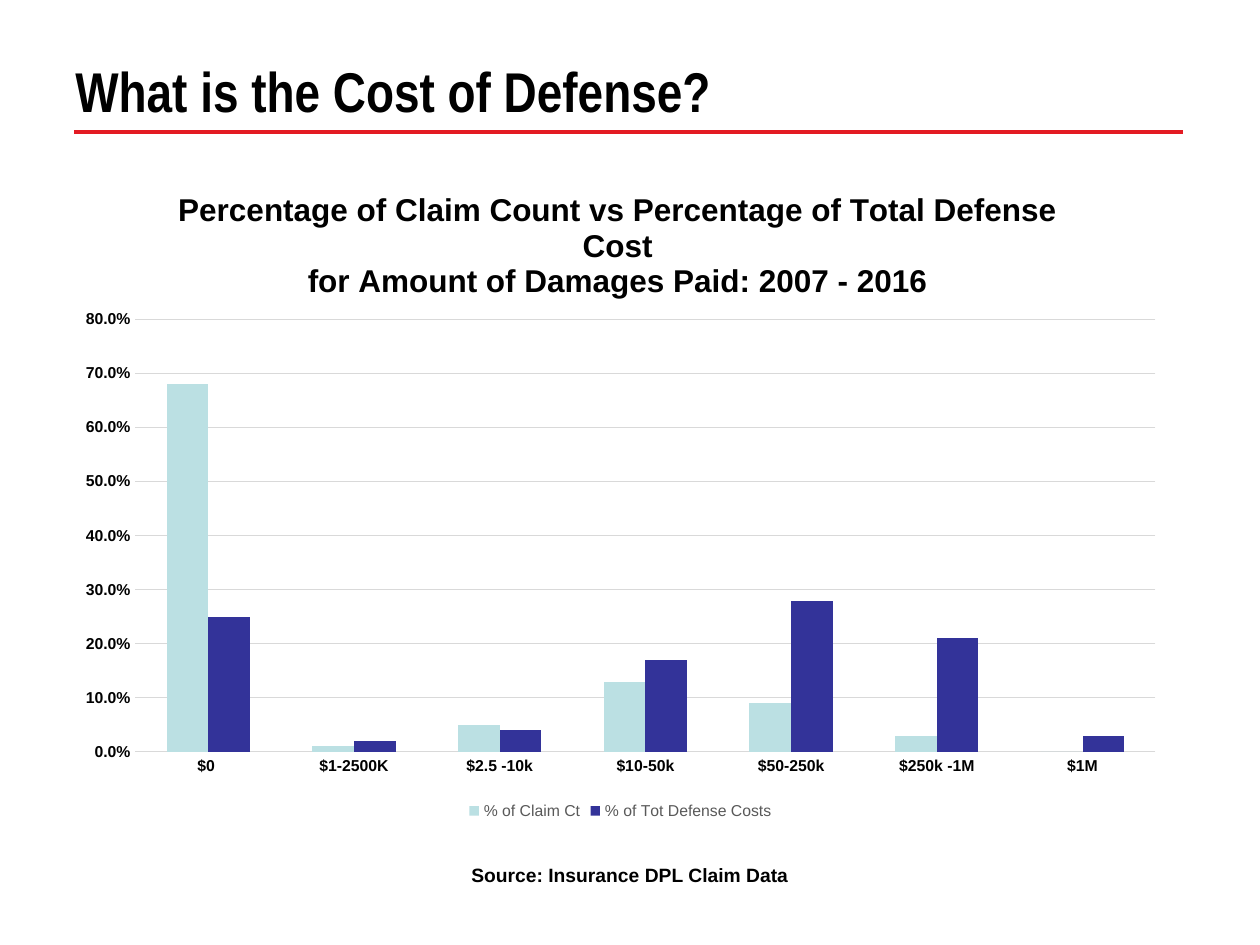
from dataclasses import dataclass

from lxml import etree
from pptx import Presentation
from pptx import util as u
from pptx.chart.data import CategoryChartData
from pptx.dml.color import RGBColor
from pptx.enum import chart as charts, shapes, text
from pptx.oxml.ns import qn


@dataclass(frozen=True)
class Theme:
    ink: str = "000000"
    accent: str = "E31B23"
    grid: str = "D9D9D9"
    legend: str = "595959"
    claims: str = "BBE0E3"
    costs: str = "333399"
    heading_font: str = "Arial Narrow"
    body_font: str = "Arial"
    heading_size: float = 32
    chart_title_size: float = 18
    source_size: float = 11
    label_size: float = 9


class SlideBuilder:
    def __init__(self, page, theme):
        self.page = page
        self.theme = theme

    def style(self, font, size, color=None, name=None, bold=True):
        font.name = name or self.theme.body_font
        font.size = u.Pt(size)
        font.bold = bold
        font.color.rgb = RGBColor.from_string(color or self.theme.ink)

    def label(self, words, left, top, width, height, size, name=None,
              align=text.PP_ALIGN.LEFT, anchor=text.MSO_ANCHOR.TOP):
        box = self.page.shapes.add_textbox(*map(u.Pt, (left, top, width, height)))
        frame = box.text_frame
        frame.word_wrap = True
        frame.vertical_anchor = anchor
        frame.text = words
        para = frame.paragraphs[0]
        para.alignment = align
        for span in para.runs:
            self.style(span.font, size, name=name)

    def rule(self, left, right, y):
        line = self.page.shapes.add_connector(
            shapes.MSO_CONNECTOR.STRAIGHT, *map(u.Pt, (left, y, right, y)))
        line.line.color.rgb = RGBColor.from_string(self.theme.accent)
        line.line.width = u.Pt(2)
        etree.SubElement(line._element.spPr, qn("a:effectLst"))

    def place(self, parent, index, **fractions):
        """Give a chart part a manual layout in fractions of the chart."""
        for old in parent.findall(qn("c:layout")):
            parent.remove(old)
        layout = etree.Element(qn("c:layout"))
        manual = etree.SubElement(layout, qn("c:manualLayout"))
        if "w" in fractions:
            etree.SubElement(manual, qn("c:layoutTarget")).set("val", "inner")
        for key in ("x", "y"):
            etree.SubElement(manual, qn(f"c:{key}Mode")).set("val", "edge")
        for key, value in fractions.items():
            etree.SubElement(manual, qn(f"c:{key}")).set("val", str(value))
        parent.insert(index, layout)

    def column_chart(self, title, categories, series, left, top, width, height):
        theme = self.theme
        data = CategoryChartData(number_format="0.0%")
        data.categories = categories
        for name, values, _ in series:
            data.add_series(name, values)
        chart = self.page.shapes.add_chart(
            charts.XL_CHART_TYPE.COLUMN_CLUSTERED,
            *map(u.Pt, (left, top, width, height)), data).chart
        self.style(chart.font, 10, bold=False)

        # Title
        frame = chart.chart_title.text_frame
        frame.text = title
        for para in frame.paragraphs:
            para.alignment = text.PP_ALIGN.CENTER
            for span in para.runs:
                self.style(span.font, theme.chart_title_size)
        chart.chart_title.include_in_layout = False
        self.place(chart.chart_title._element, 1, x=0.1, y=0.04)

        # Columns
        plot = chart.plots[0]
        plot.gap_width = 150
        plot.overlap = 0
        plot.vary_by_categories = False
        for columns, (_, _, color) in zip(plot.series, series):
            columns.format.fill.solid()
            columns.format.fill.fore_color.rgb = RGBColor.from_string(color)
            columns.invert_if_negative = False
        self.place(plot._element.getparent(), 0, x=0.065, y=0.24, w=0.915, h=0.65)

        # Axes and grid
        for axis in (chart.category_axis, chart.value_axis):
            axis.major_tick_mark = axis.minor_tick_mark = charts.XL_TICK_MARK.NONE
            axis.format.line.fill.background()
            self.style(axis.tick_labels.font, theme.label_size)
        scale = chart.value_axis
        scale.minimum_scale, scale.maximum_scale, scale.major_unit = 0, 0.8, 0.1
        scale.tick_labels.number_format = "0.0%"
        scale.tick_labels.number_format_is_linked = False
        scale.has_major_gridlines = True
        grid = scale.major_gridlines.format.line
        grid.color.rgb = RGBColor.from_string(theme.grid)
        grid.width = u.Pt(0.75)

        # Legend
        chart.has_legend = True
        chart.legend.position = charts.XL_LEGEND_POSITION.BOTTOM
        chart.legend.include_in_layout = False
        self.style(chart.legend.font, theme.label_size, theme.legend, bold=False)


def main():
    theme = Theme()
    deck = Presentation()
    deck.slide_width, deck.slide_height = u.Pt(720), u.Pt(540)
    builder = SlideBuilder(deck.slides.add_slide(deck.slide_layouts[6]), theme)

    # Heading
    builder.rule(42.5, 676, 75.6)
    builder.label("What is the Cost of Defense?", 36, 16, 648, 58,
                  theme.heading_size, theme.heading_font,
                  anchor=text.MSO_ANCHOR.BOTTOM)

    # Source line
    builder.label("Source: Insurance DPL Claim Data", 199.5, 489.6, 321, 23,
                  theme.source_size, align=text.PP_ALIGN.CENTER)

    # Claim count against defense cost
    builder.column_chart(
        "Percentage of Claim Count vs Percentage of Total Defense Cost\n"
        "for Amount of Damages Paid: 2007 - 2016",
        ["$0 ", "$1-2500K", "$2.5 -10k", "$10-50k", "$50-250k", "$250k -1M", "$1M"],
        [("% of Claim Ct", (0.68, 0.01, 0.05, 0.13, 0.09, 0.03, 0), theme.claims),
         ("% of Tot Defense Costs", (0.25, 0.02, 0.04, 0.17, 0.28, 0.21, 0.03),
          theme.costs)],
        36, 91.5, 637, 380)

    deck.save("out.pptx")


if __name__ == "__main__":
    main()
